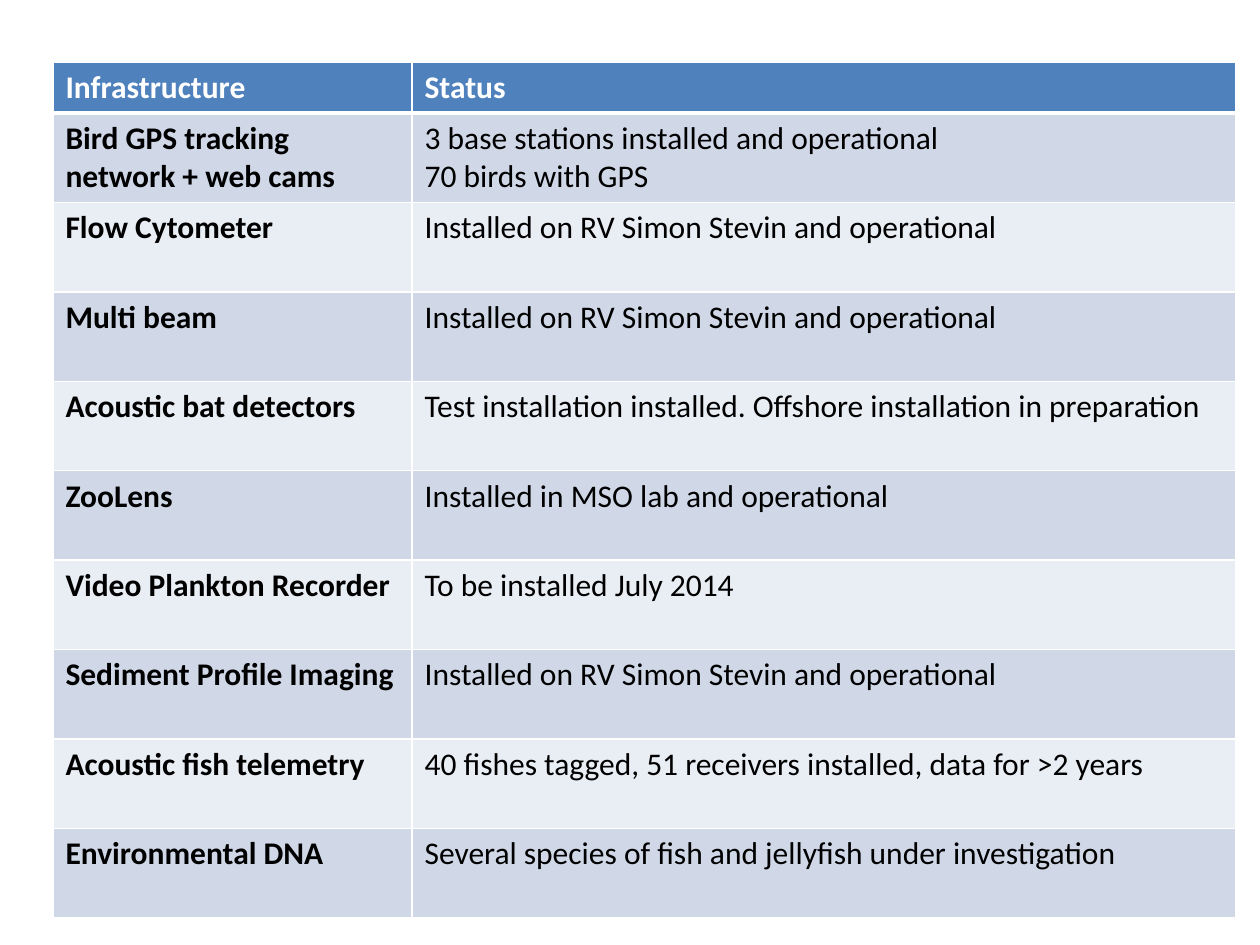
"""Build a slide with a table of research infrastructure and its status."""
from lxml.etree import SubElement
from pptx import Presentation
from pptx.dml.color import RGBColor
from pptx.oxml.ns import qn
from pptx.util import Inches, Pt

HEAD = ("Infrastructure", "Status")
ROWS = [
    ("Bird GPS tracking network + web cams",
     "3 base stations installed and operational\n70 birds with GPS"),
    ("Flow Cytometer", "Installed on RV Simon Stevin and operational"),
    ("Multi beam", "Installed on RV Simon Stevin and operational"),
    ("Acoustic bat detectors",
     "Test installation installed. Offshore installation in preparation"),
    ("ZooLens", "Installed in MSO lab and operational"),
    ("Video Plankton Recorder", "To be installed July 2014"),
    ("Sediment Profile Imaging", "Installed on RV Simon Stevin and operational"),
    ("Acoustic fish telemetry",
     "40 fishes tagged, 51 receivers installed, data for >2 years"),
    ("Environmental DNA",
     "Several species of fish and jellyfish under investigation"),
]
COLORS = {"head": "4F81BD", "odd": "D0D8E8", "even": "E9EDF4",
          "white": "FFFFFF", "black": "000000"}
LEFT, TOP = 0.42, 0.49
WIDTHS = (2.85, 6.54)
HEIGHTS = [0.4] + [0.71] * len(ROWS)


def write(cell, text, color="black", bold=False, size=18, font="Calibri"):
    cell.text = text
    for para in cell.text_frame.paragraphs:
        for run in para.runs:
            run.font.name = font
            run.font.size = Pt(size)
            run.font.bold = bold
            run.font.color.rgb = RGBColor.from_string(COLORS[color])


def border(cell, top=1, bottom=1):
    props = cell._tc.get_or_add_tcPr()
    for side, width in (("L", 1), ("R", 1), ("T", top), ("B", bottom)):
        line = SubElement(props, qn(f"a:ln{side}"), w=str(Pt(width)))
        fill = SubElement(line, qn("a:solidFill"))
        SubElement(fill, qn("a:srgbClr"), val=COLORS["white"])


def paint(cell, color):
    cell.fill.solid()
    cell.fill.fore_color.rgb = RGBColor.from_string(COLORS[color])


def main():
    deck = Presentation()
    deck.slide_width, deck.slide_height = Inches(10), Inches(7.5)
    slide = deck.slides.add_slide(deck.slide_layouts[6])
    table = slide.shapes.add_table(
        len(HEIGHTS), len(WIDTHS), Inches(LEFT), Inches(TOP),
        Inches(sum(WIDTHS)), Inches(sum(HEIGHTS))).table
    for col, width in zip(table.columns, WIDTHS):
        col.width = Inches(width)
    for row, height in zip(table.rows, HEIGHTS):
        row.height = Inches(height)

    for r, texts in enumerate([HEAD] + ROWS):
        head = r == 0
        for c, text in enumerate(texts):
            cell = table.cell(r, c)
            write(cell, text, color="white" if head else "black",
                  bold=head or c == 0)
            border(cell, top=3 if r == 1 else 1, bottom=3 if head else 1)
            paint(cell, "head" if head else "odd" if r % 2 else "even")

    deck.save("out.pptx")


if __name__ == "__main__":
    main()
